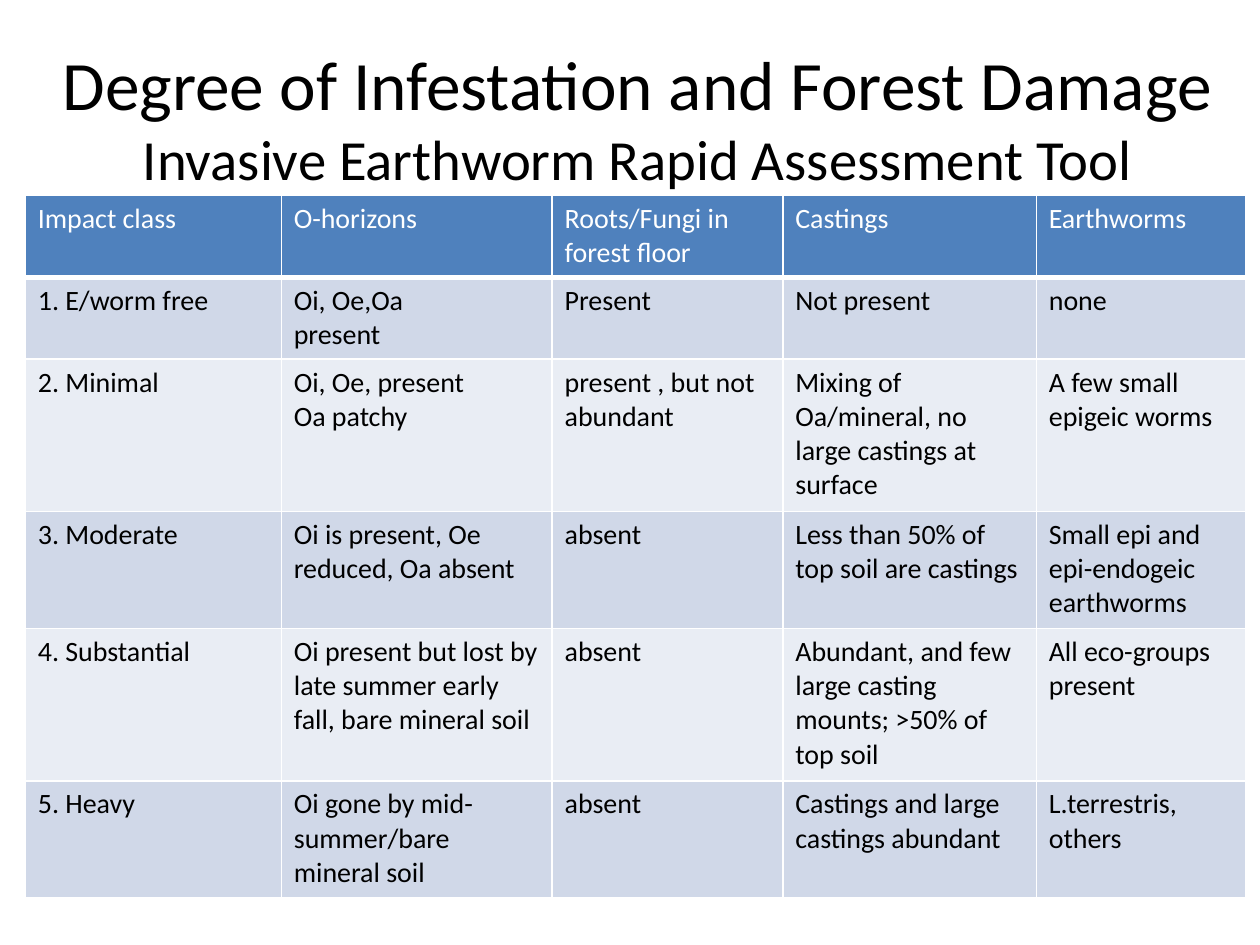
import lxml.etree
import pptx
import pptx.dml.color
import pptx.enum.text
import pptx.oxml.ns
import pptx.util

Cm = pptx.util.Cm
Pt = pptx.util.Pt

COLOURS = {
    "ink": "000000",
    "white": "FFFFFF",
    "header": "4F81BD",
    "odd": "D0D8E8",
    "even": "E9EDF4",
}

TITLE_LINES = [
    ("Degree of Infestation and Forest Damage", 39.6),
    ("Invasive Earthworm Rapid Assessment Tool", 32.4),
]
COLUMN_WIDTHS = [5.16, 5.46, 4.65, 5.11, 4.22]
ROW_HEIGHTS = [1.65, 1.65, 3.07, 2.36, 3.07, 2.36]
IMPACT_CLASSES = [
    ["Impact class", "O-horizons", "Roots/Fungi in forest floor", "Castings", "Earthworms"],
    ["1. E/worm free", "Oi, Oe,Oa\npresent", "Present", "Not present", "none"],
    ["2. Minimal", "Oi, Oe, present\nOa patchy", "present , but not abundant",
     "Mixing of Oa/mineral, no large castings at surface", "A few small epigeic worms"],
    ["3. Moderate", "Oi is present, Oe reduced, Oa absent", "absent",
     "Less than 50% of top soil are castings", "Small epi and epi-endogeic earthworms"],
    ["4. Substantial", "Oi present but lost by late summer early fall, bare mineral soil",
     "absent", "Abundant, and few large casting mounts; >50% of top soil",
     "All eco-groups present"],
    ["5. Heavy", "Oi gone by mid-summer/bare mineral soil", "absent",
     "Castings and large castings abundant", "L.terrestris, others"],
]


class SlideBuilder:
    font = "Calibri"
    table_size = 16

    def __init__(self, slide):
        self.slide = slide

    def colour(self, name):
        return pptx.dml.color.RGBColor.from_string(COLOURS[name])

    def add_run(self, paragraph, text, size, colour):
        run = paragraph.add_run()
        run.text = text
        run.font.name = self.font
        run.font.size = Pt(size)
        run.font.bold = False
        run.font.color.rgb = self.colour(colour)

    def title(self, lines, left, top, width, height):
        heading = self.slide.shapes.title
        heading.left, heading.top = Cm(left), Cm(top)
        heading.width, heading.height = Cm(width), Cm(height)
        frame = heading.text_frame
        frame.auto_size = pptx.enum.text.MSO_AUTO_SIZE.NONE
        frame.vertical_anchor = pptx.enum.text.MSO_ANCHOR.MIDDLE
        paragraph = frame.paragraphs[0]
        paragraph.alignment = pptx.enum.text.PP_ALIGN.CENTER
        for index, (text, size) in enumerate(lines):
            if index:
                paragraph.add_line_break()
            self.add_run(paragraph, text, size, "ink")

    def header_borders(self, cell):
        properties = cell._tc.get_or_add_tcPr()
        qn = pptx.oxml.ns.qn
        for side, width in (("L", 1), ("R", 1), ("T", 1), ("B", 3)):
            border = lxml.etree.SubElement(properties, qn(f"a:ln{side}"), w=str(Pt(width)))
            fill = lxml.etree.SubElement(border, qn("a:solidFill"))
            lxml.etree.SubElement(fill, qn("a:srgbClr"), val=COLOURS["white"])

    def cell(self, cell, text, fill, ink):
        cell.fill.solid()
        cell.fill.fore_color.rgb = self.colour(fill)
        frame = cell.text_frame
        for index, line in enumerate(text.split("\n")):
            paragraph = frame.add_paragraph() if index else frame.paragraphs[0]
            self.add_run(paragraph, line, self.table_size, ink)

    def table(self, rows, widths, heights, left, top):
        grid = self.slide.shapes.add_table(
            len(rows), len(widths), Cm(left), Cm(top), Cm(sum(widths)), Cm(sum(heights))
        ).table
        for column, width in zip(grid.columns, widths):
            column.width = Cm(width)
        for row, height in zip(grid.rows, heights):
            row.height = Cm(height)
        for r, texts in enumerate(rows):
            fill = "header" if r == 0 else "odd" if r % 2 else "even"
            ink = "white" if r == 0 else "ink"
            for c, text in enumerate(texts):
                if r == 0:
                    self.header_borders(grid.cell(r, c))
                self.cell(grid.cell(r, c), text, fill, ink)


def main():
    deck = pptx.Presentation()
    deck.slide_width, deck.slide_height = Cm(25.4), Cm(19.05)
    builder = SlideBuilder(deck.slides.add_slide(deck.slide_layouts[5]))
    builder.title(TITLE_LINES, 0.3, 0.76, 25.1, 3.18)
    builder.table(IMPACT_CLASSES, COLUMN_WIDTHS, ROW_HEIGHTS, 0.51, 3.94)
    deck.save("out.pptx")


if __name__ == "__main__":
    main()
